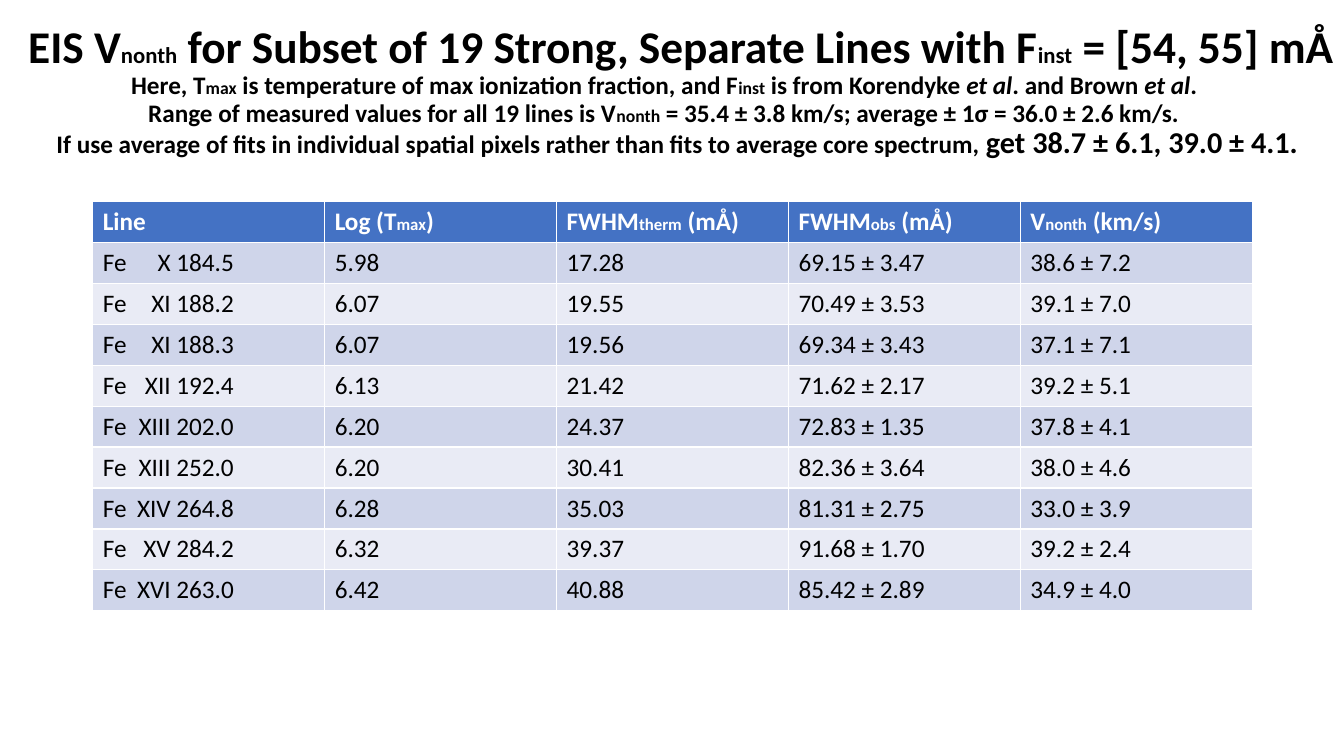
from lxml.etree import SubElement
from pptx import Presentation
from pptx.dml.color import RGBColor
from pptx.enum.text import MSO_ANCHOR, MSO_AUTO_SIZE, PP_ALIGN
from pptx.oxml.ns import qn
from pptx.util import Inches, Pt

COLORS = {"ink": "000000", "header": "4472C4", "header_text": "FFFFFF",
          "odd_row": "CFD5EA", "even_row": "E9EBF5"}
FONT = "Calibri"

HEADING = [
    (0, [("EIS V", 32.4), ("nonth", 16.2),
         (" for Subset of 19 Strong, Separate Lines with F", 32.4),
         ("inst", 16.2), (" = [54, 55] mÅ", 32.4)]),
    (1.02, [("Here, T", 18), ("max", 12.6),
            (" is temperature of max ionization fraction, and F", 18),
            ("inst", 12.6), (" is from Korendyke ", 18), ("et al", 18, True),
            (". and Brown ", 18), ("et al", 18, True), (".", 18)]),
    (1.19, [("Range of measured values for all 19 lines is V", 18), ("nonth", 12.6),
            (" = 35.4 ± 3.8 km/s; average ± 1σ = 36.0 ± 2.6 km/s.", 18)]),
    (0.28, [("If use average of fits in individual spatial pixels rather than "
             "fits to average core spectrum, ", 18),
            ("get 38.7 ± 6.1, 39.0 ± 4.1.", 21.6)]),
]

COLUMNS = [("Line", "", ""), ("Log (T", "max", ")"), ("FWHM", "therm", " (mÅ)"),
           ("FWHM", "obs", " (mÅ)"), ("V", "nonth", " (km/s)")]

SPECTRAL_LINES = [
    ("Fe\tX 184.5", "5.98", "17.28", "69.15 ± 3.47", "38.6 ± 7.2"),
    ("Fe\tXI 188.2", "6.07", "19.55", "70.49 ± 3.53", "39.1 ± 7.0"),
    ("Fe\tXI 188.3", "6.07", "19.56", "69.34 ± 3.43", "37.1 ± 7.1"),
    ("Fe\tXII 192.4", "6.13", "21.42", "71.62 ± 2.17", "39.2 ± 5.1"),
    ("Fe\tXIII 202.0", "6.20", "24.37", "72.83 ± 1.35", "37.8 ± 4.1"),
    ("Fe\tXIII 252.0", "6.20", "30.41", "82.36 ± 3.64", "38.0 ± 4.6"),
    ("Fe\tXIV 264.8", "6.28", "35.03", "81.31 ± 2.75", "33.0 ± 3.9"),
    ("Fe\tXV 284.2", "6.32", "39.37", "91.68 ± 1.70", "39.2 ± 2.4"),
    ("Fe\tXVI 263.0", "6.42", "40.88", "85.42 ± 2.89", "34.9 ± 4.0"),
]


def add_text(paragraph, text, size=18, italic=False, bold=False, color="ink"):
    run = paragraph.add_run()
    run.text = text
    run.font.name = FONT
    run.font.size = Pt(size)
    run.font.bold = bold
    run.font.italic = italic
    run.font.color.rgb = RGBColor.from_string(COLORS[color])


def add_right_tab(paragraph, position):
    tabs = SubElement(paragraph._p.get_or_add_pPr(), qn("a:tabLst"))
    SubElement(tabs, qn("a:tab"), pos=str(Inches(position)), algn="r")


def build_heading(slide, left, top, width, height):
    title = slide.shapes.title
    title.left, title.top = Inches(left), Inches(top)
    title.width, title.height = Inches(width), Inches(height)
    frame = title.text_frame
    frame.word_wrap = True
    frame.auto_size = MSO_AUTO_SIZE.NONE
    frame.vertical_anchor = MSO_ANCHOR.MIDDLE
    for index, (indent, pieces) in enumerate(HEADING):
        line = frame.add_paragraph() if index else frame.paragraphs[0]
        line.alignment = PP_ALIGN.LEFT
        line.line_spacing = 0.9
        line.space_before = Pt(0)
        line._p.get_or_add_pPr().set("marL", str(Inches(indent)))
        for piece in pieces:
            add_text(line, *piece, bold=True)


def fill_cell(cell, color):
    cell.fill.solid()
    cell.fill.fore_color.rgb = RGBColor.from_string(COLORS[color])


def build_line_table(slide, left, top, width, height):
    table = slide.shapes.add_table(
        len(SPECTRAL_LINES) + 1, len(COLUMNS),
        Inches(left), Inches(top), Inches(width), Inches(height)).table
    for column, (symbol, subscript, unit) in enumerate(COLUMNS):
        cell = table.cell(0, column)
        fill_cell(cell, "header")
        for text, size in ((symbol, 18), (subscript, 12), (unit, 18)):
            if text:
                add_text(cell.text_frame.paragraphs[0], text, size,
                         bold=True, color="header_text")
    for row, values in enumerate(SPECTRAL_LINES, start=1):
        for column, value in enumerate(values):
            cell = table.cell(row, column)
            fill_cell(cell, "odd_row" if row % 2 else "even_row")
            paragraph = cell.text_frame.paragraphs[0]
            if column == 0:
                add_right_tab(paragraph, 1.3)
            add_text(paragraph, value)


def main():
    deck = Presentation()
    deck.slide_width, deck.slide_height = Inches(13.33), Inches(7.5)
    slide = deck.slides.add_slide(deck.slide_layouts[5])
    build_heading(slide, 0.18, 0.1, 13.15, 1.63)
    build_line_table(slide, 0.92, 2, 11.5, 4.06)
    deck.save("out.pptx")


if __name__ == "__main__":
    main()
